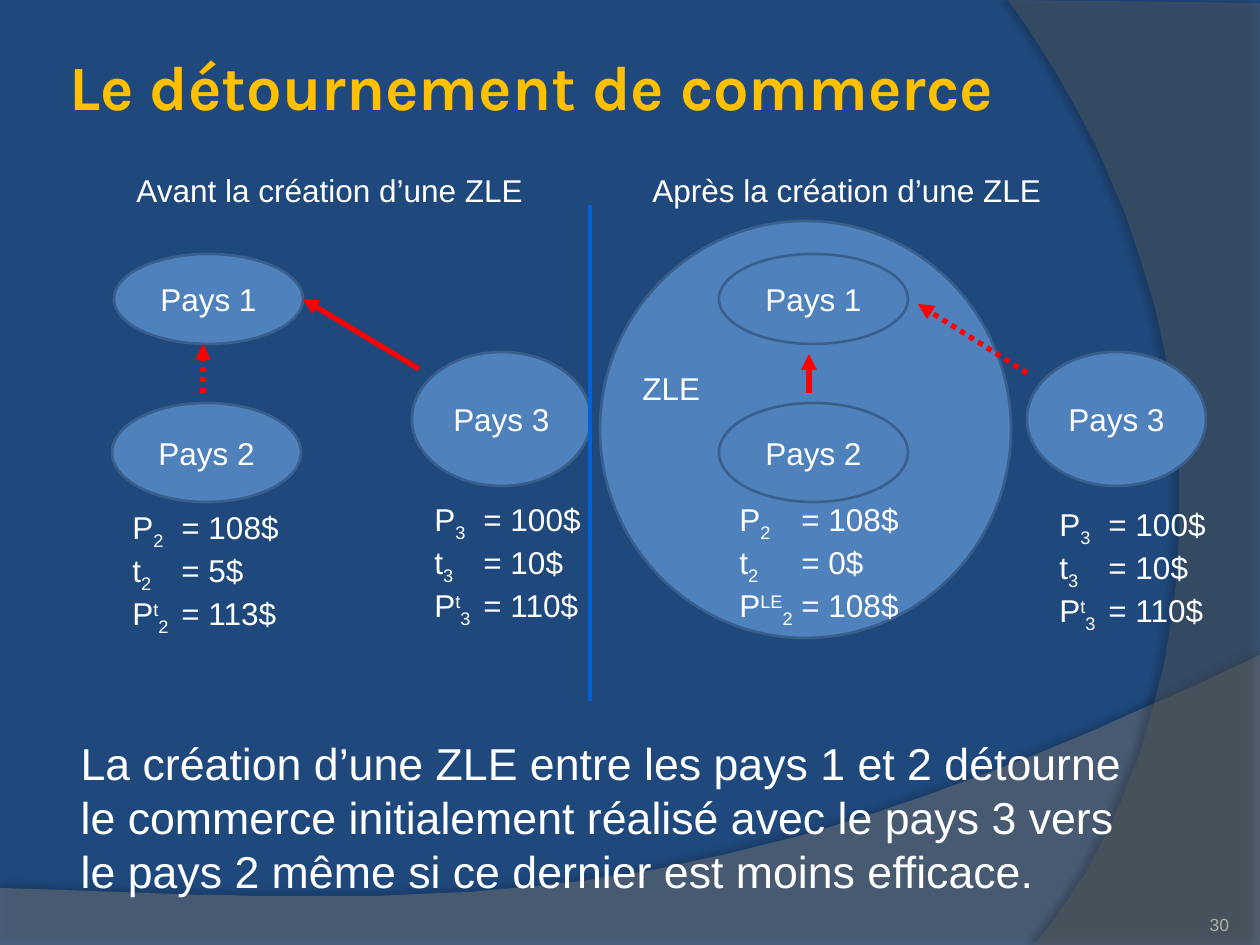
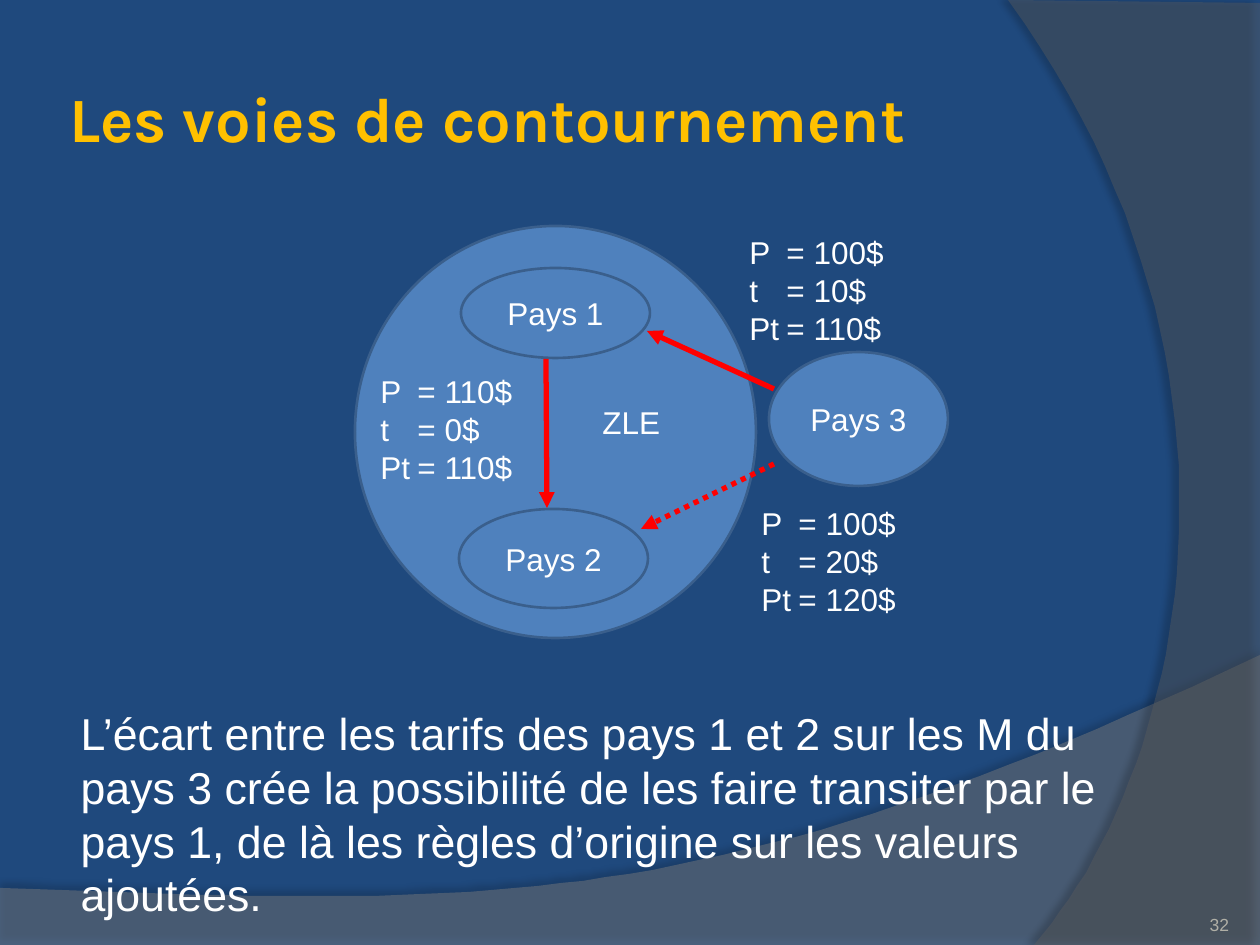
import lxml.etree
import pptx
import pptx.dml.color
import pptx.enum.dml
import pptx.enum.shapes
import pptx.enum.text
import pptx.oxml.ns
import pptx.util

Color = pptx.dml.color.RGBColor
Align = pptx.enum.text.PP_ALIGN
Anchor = pptx.enum.text.MSO_ANCHOR
AutoSize = pptx.enum.text.MSO_AUTO_SIZE
Pt = pptx.util.Pt

NAVY = Color(0x1F, 0x49, 0x7D)
GOLD = Color(0xFF, 0xC0, 0x00)
WHITE = Color(0xFF, 0xFF, 0xFF)
BLACK = Color(0x00, 0x00, 0x00)
BLUE = Color(0x4F, 0x81, 0xBD)
BLUE_EDGE = Color(0x3A, 0x5F, 0x8C)
RED = Color(0xFF, 0x00, 0x00)
DIVIDER_BLUE = Color(0x00, 0x62, 0xD7)
NUMBER_GREY = Color(0xB0, 0xAF, 0xA6)
BAND_GREY = Color(0x7F, 0x7F, 0x7F)
SIDE_GREY = Color(0x5E, 0x5E, 0x5E)

EMU_PER_PX = 914400 / 126
COUNTRY_SIZES = {"Pays 1": (189, 90), "Pays 2": (189, 99), "Pays 3": (179, 134)}


def px(length):
    return pptx.util.Emu(round(length * EMU_PER_PX))


def add_xml(parent, tag, **attributes):
    child = lxml.etree.SubElement(parent, pptx.oxml.ns.qn(tag))
    for name, value in attributes.items():
        child.set(name, str(value))
    return child


def bezier(start, first, second, end, steps=48):
    """Points after start along a cubic curve."""
    points = []
    for step in range(1, steps + 1):
        t = step / steps
        weights = ((1 - t) ** 3, 3 * t * (1 - t) ** 2, 3 * t * t * (1 - t), t ** 3)
        corners = (start, first, second, end)
        points.append(tuple(sum(w * c[axis] for w, c in zip(weights, corners)) for axis in (0, 1)))
    return points


def write_text(frame, paragraphs, size=18, font="Arial", color=WHITE, bold=False,
               align=Align.LEFT, anchor=Anchor.TOP, tab=None):
    """Fill a frame; a paragraph is a string or a list of (text, baseline percent)."""
    frame.vertical_anchor = anchor
    for index, content in enumerate(paragraphs):
        para = frame.paragraphs[0] if index == 0 else frame.add_paragraph()
        para.alignment = align
        if tab:
            stops = add_xml(para._p.get_or_add_pPr(), "a:tabLst")
            add_xml(stops, "a:tab", pos=px(tab), algn="l")
        spans = [(content, 0)] if isinstance(content, str) else content
        for text, baseline in spans:
            span = para.add_run()
            span.text = text
            span.font.size = Pt(size)
            span.font.name = font
            span.font.bold = bold
            span.font.color.rgb = color
            if baseline:
                span.font._element.set("baseline", str(baseline * 1000))


def price_rows(price, tariff, total, country="", mark="t"):
    """Price, tariff and total, with the country as subscript when there is one."""
    rows = []
    for letter, raised, gap, amount in (("P", "", " \t", price), ("t", "", "\t", tariff),
                                        ("P", mark, "\t", total)):
        if country:
            row = [(letter, 0), (raised, 30), (country, -25), (f"{gap}= {amount}$", 0)]
            rows.append([span for span in row if span[0]])
        else:
            rows.append(f"{letter}{raised}{gap}= {amount}$")
    return rows


class Composer:
    """Holds the deck's style and the current page."""

    def __init__(self):
        self.deck = pptx.Presentation()
        self.deck.slide_width, self.deck.slide_height = px(1260), px(945)
        self.layout = self.deck.slide_layouts[1]
        background = self.deck.slide_master.background.fill
        background.solid()
        background.fore_color.rgb = NAVY
        self.page = None

    def add_page(self, title, title_top, body, body_top, number):
        self.page = self.deck.slides.add_slide(self.layout)
        heading = self.page.shapes.title
        self.place(heading, 63, title_top, 1197, 158)
        frame = heading.text_frame
        frame.margin_left = frame.margin_right = frame.margin_top = frame.margin_bottom = px(6)
        write_text(frame, [title], size=36, font="Karla", color=GOLD, bold=True,
                   anchor=Anchor.MIDDLE)
        conclusion = self.page.placeholders[1]
        self.place(conclusion, 63, body_top, 1092, 199)
        write_text(conclusion.text_frame, [body], size=25.5)
        para = conclusion.text_frame.paragraphs[0]
        para.space_before = Pt(5)
        properties = para._p.get_or_add_pPr()
        properties.set("marL", str(px(5)))
        properties.set("indent", "0")
        add_xml(properties, "a:buNone")
        self.page_number(number)

    def place(self, holder, left, top, width, height):
        holder.left, holder.top, holder.width, holder.height = map(px, (left, top, width, height))
        holder.text_frame.word_wrap = True
        holder.text_frame.auto_size = AutoSize.NONE

    def page_number(self, number):
        box = self.page.shapes.add_textbox(px(1124), px(885), px(105), px(50))
        frame = box.text_frame
        frame.word_wrap = True
        frame.margin_left = frame.margin_right = frame.margin_top = frame.margin_bottom = 0
        write_text(frame, [str(number)], size=10, color=NUMBER_GREY,
                   align=Align.RIGHT, anchor=Anchor.BOTTOM)

    def layout_band(self, points, color, opacity, shadow_opacity, distance, direction):
        """Draw a translucent outline and keep it on the shared layout."""
        builder = self.page.shapes.build_freeform(*points[0], scale=EMU_PER_PX)
        builder.add_line_segments(points[1:], close=True)
        band = builder.convert_to_shape()
        band.fill.solid()
        band.fill.fore_color.rgb = color
        band.line.fill.background()
        properties = band.element.spPr
        fill_color = properties.find(".//" + pptx.oxml.ns.qn("a:srgbClr"))
        add_xml(fill_color, "a:alpha", val=opacity * 1000)
        band.shadow.inherit = False
        effects = properties.find(pptx.oxml.ns.qn("a:effectLst"))
        shadow = add_xml(effects, "a:outerShdw", blurRad=Pt(4), dist=Pt(distance),
                         dir=direction * 60000, algn="ctr", rotWithShape=0)
        shadow_color = add_xml(shadow, "a:srgbClr", val=BLACK)
        add_xml(shadow_color, "a:alpha", val=shadow_opacity * 1000)
        self.layout.shapes.element.insert(2, band.element)

    def ellipse(self, left, top, width, height, label=None):
        oval = self.page.shapes.add_shape(pptx.enum.shapes.MSO_SHAPE.OVAL,
                                          px(left), px(top), px(width), px(height))
        oval.shadow.inherit = False
        oval.fill.solid()
        oval.fill.fore_color.rgb = BLUE
        oval.line.color.rgb = BLUE_EDGE
        oval.line.width = Pt(1.5)
        if label:
            write_text(oval.text_frame, [label], align=Align.CENTER, anchor=Anchor.MIDDLE)

    def country(self, name, left, top):
        self.ellipse(left, top, *COUNTRY_SIZES[name], label=name)

    def label(self, left, top, width, paragraphs, tab=None):
        height = 50 if len(paragraphs) == 1 else 127
        box = self.page.shapes.add_textbox(px(left), px(top), px(width), px(height))
        box.text_frame.word_wrap = False
        box.text_frame.auto_size = AutoSize.SHAPE_TO_FIT_TEXT
        write_text(box.text_frame, paragraphs, tab=tab)

    def line(self, start, end, color=RED, width=3, dotted=False, arrow=True):
        connector = self.page.shapes.add_connector(
            pptx.enum.shapes.MSO_CONNECTOR.STRAIGHT, *map(px, start + end))
        connector.line.color.rgb = color
        connector.line.width = Pt(width)
        if dotted:
            connector.line.dash_style = pptx.enum.dml.MSO_LINE.ROUND_DOT
        properties = connector.element.spPr
        if arrow:
            add_xml(properties.get_or_add_ln(), "a:tailEnd", type="triangle")
        add_xml(properties, "a:effectLst")


def add_layout_bands(composer):
    side_start, bottom_start = (1034, 945), (1260, 655)
    side = [(1260, 3), (1260, 945), side_start]
    side += bezier(side_start, (1178, 780), (1283, 378), (1008, 0))
    bottom = [(0, 888), (0, 946), (1260, 946), bottom_start]
    bottom += bezier(bottom_start, (704, 919), (493, 906), (0, 888))
    composer.layout_band(side, SIDE_GREY, 40, 45, 4, 180)
    composer.layout_band(bottom, BAND_GREY, 45, 35, 3.5, 270)


def build_trade_diversion(composer):
    composer.add_page(
        "Le détournement de commerce", 6,
        "La création d’une ZLE entre les pays 1 et 2 détourne le commerce initialement réalisé "
        "avec le pays 3 vers le pays 2 même si ce dernier est moins efficace.", 730, 30)
    add_layout_bands(composer)
    composer.ellipse(600, 221, 411, 417)
    for name, left, top in (("Pays 1", 114, 254), ("Pays 2", 112, 403), ("Pays 3", 412, 352),
                            ("Pays 1", 719, 254), ("Pays 2", 719, 403), ("Pays 3", 1027, 352)):
        composer.country(name, left, top)
    composer.line((419, 369), (303, 299))
    composer.line((203, 393), (203, 344), dotted=True)
    composer.line((809, 393), (809, 354))
    composer.line((1027, 373), (918, 304), dotted=True)
    composer.line((590, 205), (590, 701), color=DIVIDER_BLUE, width=2.25, arrow=False)
    country_3 = price_rows(100, 10, 110, "3")
    composer.label(422, 494, 174, country_3, tab=49)
    composer.label(120, 502, 174, price_rows(108, 5, 113, "2"), tab=49)
    composer.label(1047, 499, 174, country_3, tab=49)
    composer.label(727, 494, 186, price_rows(108, 0, 108, "2", mark="LE"), tab=62)
    composer.label(630, 363, 83, ["ZLE"])
    composer.label(124, 165, 416, ["Avant la création d’une ZLE"])
    composer.label(640, 165, 418, ["Après la création d’une ZLE"])


def build_bypass_routes(composer):
    composer.add_page(
        "Les voies de contournement", 38,
        "L’écart entre les tarifs des pays 1 et 2 sur les M du pays 3 crée la possibilité de les "
        "faire transiter par le pays 1, de là les règles d’origine sur les valeurs ajoutées.",
        700, 32)
    composer.ellipse(355, 226, 401, 412)
    for name, left, top in (("Pays 1", 461, 268), ("Pays 2", 459, 509), ("Pays 3", 769, 352)):
        composer.country(name, left, top)
    composer.label(737, 227, 160, price_rows(100, 10, 110), tab=37)
    composer.label(368, 366, 158, price_rows(110, 0, 110), tab=37)
    composer.label(749, 498, 160, price_rows(100, 20, 120), tab=37)
    composer.label(590, 397, 83, ["ZLE"])
    composer.line((546, 359), (547, 508))
    composer.line((774, 389), (647, 331))
    composer.line((774, 464), (641, 529), dotted=True)


def main():
    composer = Composer()
    build_trade_diversion(composer)
    build_bypass_routes(composer)
    composer.deck.save("out.pptx")


if __name__ == "__main__":
    main()
